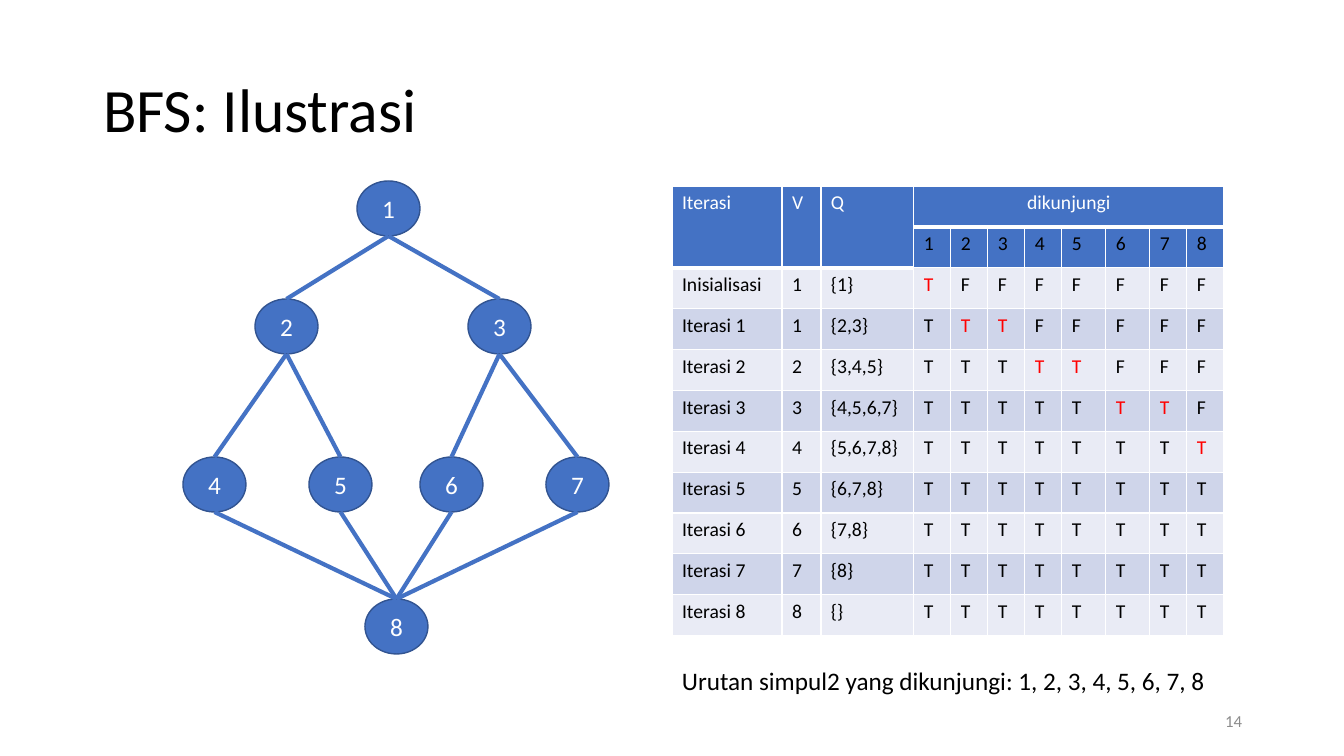
from lxml.etree import SubElement
from pptx import Presentation
from pptx.dml.color import RGBColor
from pptx.enum.shapes import MSO_CONNECTOR, MSO_SHAPE
from pptx.enum.text import MSO_ANCHOR as ANCHOR, PP_ALIGN as ALIGN
from pptx.oxml.ns import qn
from pptx.util import Pt

EMU_PER_PX = 914400 / 100.8
NODE_W, NODE_H = 63, 55
BLUE, BLACK, WHITE, RED = "4472C4", "000000", "FFFFFF", "FF0000"
BANDS = "E9EBF5", "CFD5EA"

# Graph: left and top of each node, and the edges from parent to child
NODES = {1: (357, 181), 2: (255, 299), 3: (468, 299),
         4: (183, 457), 5: (309, 457), 6: (420, 457), 7: (546, 457),
         8: (365, 599)}
EDGES = [(2, 4), (2, 5), (3, 6), (3, 7), (1, 2), (1, 3),
         (6, 8), (7, 8), (4, 8), (5, 8)]

# Trace: queue after each iteration, and the iteration that visits each node
QUEUES = ["{1}", "{2,3}", "{3,4,5}", "{4,5,6,7}", "{5,6,7,8}",
          "{6,7,8}", "{7,8}", "{8}", "{}"]
VISITED_AT = {1: 0, 2: 1, 3: 1, 4: 2, 5: 2, 6: 3, 7: 3, 8: 4}
COLUMNS = [110, 39, 93, 37, 37, 37, 37, 44, 44, 37, 37]


def px(*lengths):
    return [round(length * EMU_PER_PX) for length in lengths]


def rgb(value):
    return RGBColor.from_string(value)


class SlideBuilder:
    font = "Calibri"

    def __init__(self, slide):
        self.shapes = slide.shapes

    def set_text(self, frame, text, size, color, align=ALIGN.LEFT):
        frame.text = text
        paragraph = frame.paragraphs[0]
        paragraph.alignment = align
        paragraph.font.name = self.font
        paragraph.font.size = Pt(size)
        paragraph.font.color.rgb = rgb(color)
        return paragraph

    def title(self, text, *box):
        title = self.shapes.title
        title.left, title.top, title.width, title.height = px(*box)
        title.text_frame.vertical_anchor = ANCHOR.MIDDLE
        self.set_text(title.text_frame, text, 44, BLACK).line_spacing = 0.9

    def text(self, text, box, size, color, align=ALIGN.LEFT,
             anchor=ANCHOR.TOP, wrap=True):
        frame = self.shapes.add_textbox(*px(*box)).text_frame
        frame.word_wrap = wrap
        frame.vertical_anchor = anchor
        self.set_text(frame, text, size, color, align)

    def node(self, label, left, top):
        node = self.shapes.add_shape(MSO_SHAPE.OVAL,
                                     *px(left, top, NODE_W, NODE_H))
        node.shadow.inherit = False
        node.fill.solid()
        node.fill.fore_color.rgb = rgb(BLUE)
        node.line.color.rgb = rgb("325491")
        node.line.width = Pt(1)
        node.text_frame.vertical_anchor = ANCHOR.MIDDLE
        self.set_text(node.text_frame, label, 18, WHITE, ALIGN.CENTER)

    def edge(self, parent, child):
        """Join the bottom of the parent to the top of the child."""
        start = parent[0] + NODE_W / 2, parent[1] + NODE_H
        end = child[0] + NODE_W / 2, child[1]
        edge = self.shapes.add_connector(MSO_CONNECTOR.STRAIGHT,
                                         *px(*start, *end))
        edge.line.color.rgb = rgb(BLUE)
        edge.line.width = Pt(3)
        SubElement(edge._element.spPr, qn("a:effectLst"))

    def table(self, rows, left, top, widths, height):
        table = self.shapes.add_table(
            rows, len(widths), *px(left, top, sum(widths), height)).table
        for column, width in zip(table.columns, px(*widths)):
            column.width = width
        return table

    def cell(self, cell, text, fill, color, align=ALIGN.LEFT, bottom=1):
        self.set_text(cell.text_frame, text, 14, color, align)
        properties = cell._tc.get_or_add_tcPr()
        for side, width in (("L", 1), ("R", 1), ("T", 1), ("B", bottom)):
            border = SubElement(properties, qn(f"a:ln{side}"), w=str(Pt(width)))
            paint = SubElement(border, qn("a:solidFill"))
            SubElement(paint, qn("a:srgbClr"), val=WHITE)
        cell.fill.solid()
        cell.fill.fore_color.rgb = rgb(fill)


def main():
    prs = Presentation()
    prs.slide_width, prs.slide_height = px(1344, 756)
    page = SlideBuilder(prs.slides.add_slide(prs.slide_layouts[5]))
    page.title("BFS: Ilustrasi", 93, 40, 1159, 146)

    # Graph
    for number, place in NODES.items():
        page.node(str(number), *place)
    for parent, child in EDGES:
        page.edge(NODES[parent], NODES[child])

    # Table header
    trace = page.table(len(QUEUES) + 2, 672, 186, COLUMNS, 450)
    for col, heading in enumerate(["Iterasi", "V", "Q"]):
        trace.cell(0, col).merge(trace.cell(1, col))
        page.cell(trace.cell(0, col), heading, BLUE, WHITE, bottom=3)
    trace.cell(0, 3).merge(trace.cell(0, 10))
    page.cell(trace.cell(0, 3), "dikunjungi", BLUE, WHITE, ALIGN.CENTER, 3)
    for number in NODES:
        page.cell(trace.cell(1, number + 2), str(number), BLUE, BLACK)

    # Table body: a node turns red in the iteration that visits it
    for step, queue in enumerate(QUEUES):
        name = f"Iterasi {step}" if step else "Inisialisasi"
        entries = [(name, BLACK), (str(max(step, 1)), BLACK), (queue, BLACK)]
        for visit in VISITED_AT.values():
            entries.append(("T" if visit <= step else "F",
                            RED if visit == step else BLACK))
        for col, (text, color) in enumerate(entries):
            page.cell(trace.cell(step + 2, col), text, BANDS[step % 2], color)

    # Page number and visiting order
    page.text("14", (950, 701, 302, 40), 12, "8C8C8C", ALIGN.RIGHT,
              ANCHOR.MIDDLE)
    page.text("Urutan simpul2 yang dikunjungi: 1, 2, 3, 4, 5, 6, 7, 8",
              (672, 660, 549, 40), 18, BLACK, wrap=False)
    prs.save("out.pptx")


if __name__ == "__main__":
    main()
